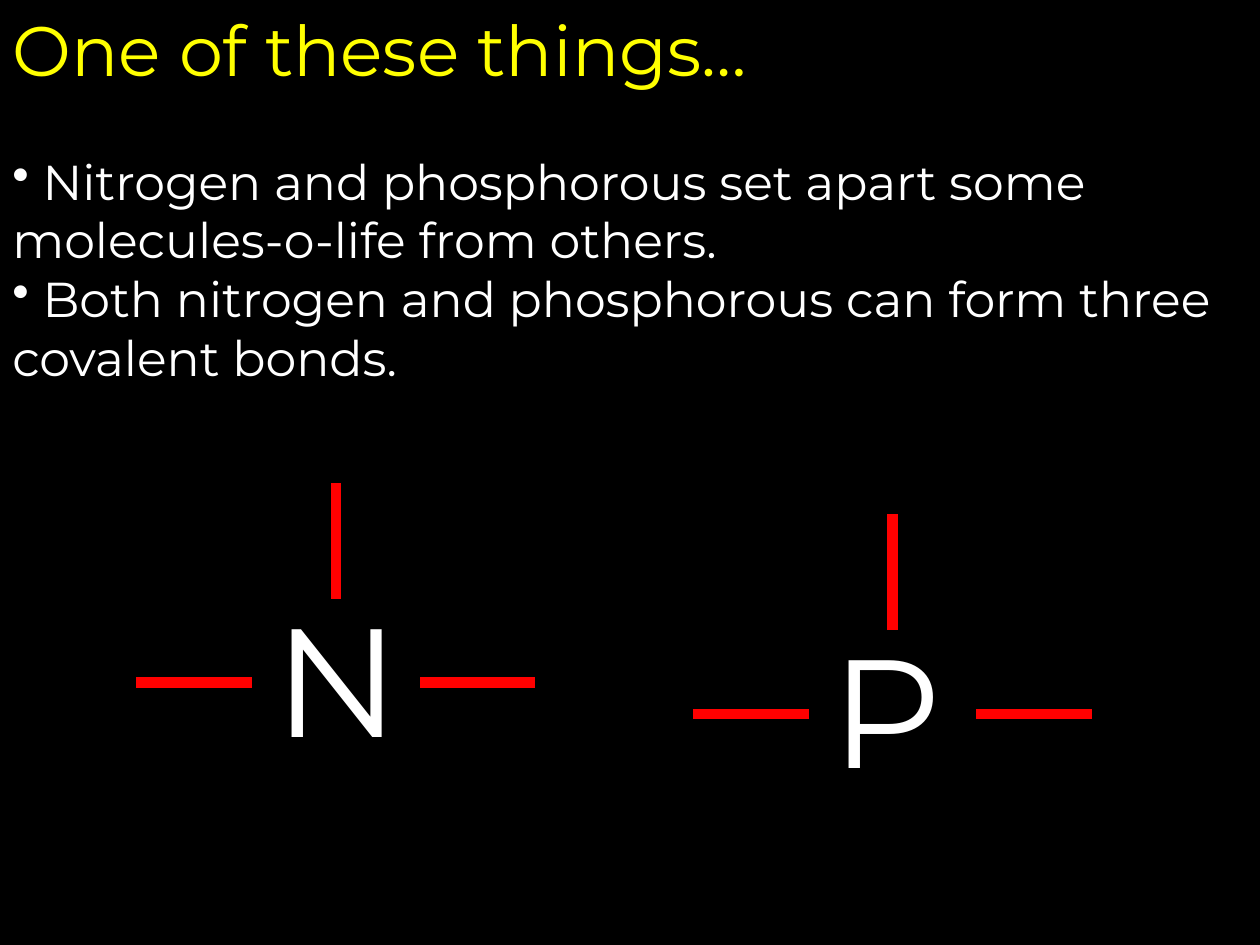
from lxml.etree import SubElement
from pptx import Presentation
from pptx.dml.color import RGBColor
from pptx.enum.shapes import MSO_CONNECTOR as CONN
from pptx.enum.text import MSO_ANCHOR as ANCHOR, MSO_AUTO_SIZE as AUTO, PP_ALIGN as ALIGN
from pptx.oxml import parse_xml
from pptx.oxml.ns import nsdecls, qn
from pptx.util import Cm, Pt

BLACK, WHITE, YELLOW, RED = "000000", "FFFFFF", "FFFF00", "FF0000"


def color(value):
    return RGBColor.from_string(value)


class Deck:
    font = "Montserrat"
    bond_width = Pt(6)

    def __init__(self, width, height):
        self.prs = Presentation()
        self.prs.slide_width, self.prs.slide_height = Cm(width), Cm(height)
        self.s = self.prs.slides.add_slide(self.prs.slide_layouts[5])
        fill = self.s.background.fill
        fill.solid()
        fill.fore_color.rgb = color(BLACK)

    def fill_text(self, sp, lines, size, rgb, bullet=None):
        tf = sp.text_frame
        tf.text = "\n".join(lines)
        tf.word_wrap = True
        tf.auto_size = AUTO.SHAPE_TO_FIT_TEXT
        tf.vertical_anchor = ANCHOR.TOP
        for p in tf.paragraphs:
            p.alignment = ALIGN.LEFT
            p.font.name, p.font.size = self.font, Pt(size)
            p.font.color.rgb = color(rgb)
            if bullet:
                bu = parse_xml(f'<a:buChar {nsdecls("a")} char="{bullet}"/>')
                p._p.get_or_add_pPr().insert(0, bu)

    def title(self, text, x, y, w, h):
        sp = self.s.shapes.title
        sp.left, sp.top, sp.width, sp.height = Cm(x), Cm(y), Cm(w), Cm(h)
        self.fill_text(sp, [text], 40, YELLOW)

    def text(self, lines, x, y, w, h, size, bullet=None):
        sp = self.s.shapes.add_textbox(Cm(x), Cm(y), Cm(w), Cm(h))
        self.fill_text(sp, lines, size, WHITE, bullet)

    def bond(self, x1, y1, x2, y2):
        line = self.s.shapes.add_connector(CONN.STRAIGHT, Cm(x1), Cm(y1), Cm(x2), Cm(y2))
        line.line.color.rgb = color(RED)
        line.line.width = self.bond_width
        SubElement(line._element.spPr, qn("a:effectLst"))

    def atom(self, symbol, x, y):
        """Symbol centred near (x, y) with bonds to the right, top and left."""
        near, far = 1.69, 4.02
        self.text([symbol], x - 1.48, y - 2.12, 3.6, 4.02, 88)
        for dx, dy in ((1, 0), (0, -1), (-1, 0)):
            self.bond(x + dx * far, y + dy * far, x + dx * near, y + dy * near)


def main():
    deck = Deck(25.4, 19.05)

    # Heading and statements
    deck.title("One of these things…", 0, 0, 25.4, 1.96)
    deck.text(
        [" Nitrogen and phosphorous set apart some molecules-o-life from others.",
         " Both nitrogen and phosphorous can form three covalent bonds."],
        0, 2.92, 25.4, 5.05, 28, bullet="•")

    # Atoms with three bonds each
    deck.atom("P", 17.99, 14.39)
    deck.atom("N", 6.77, 13.76)

    deck.prs.save("out.pptx")


if __name__ == "__main__":
    main()
